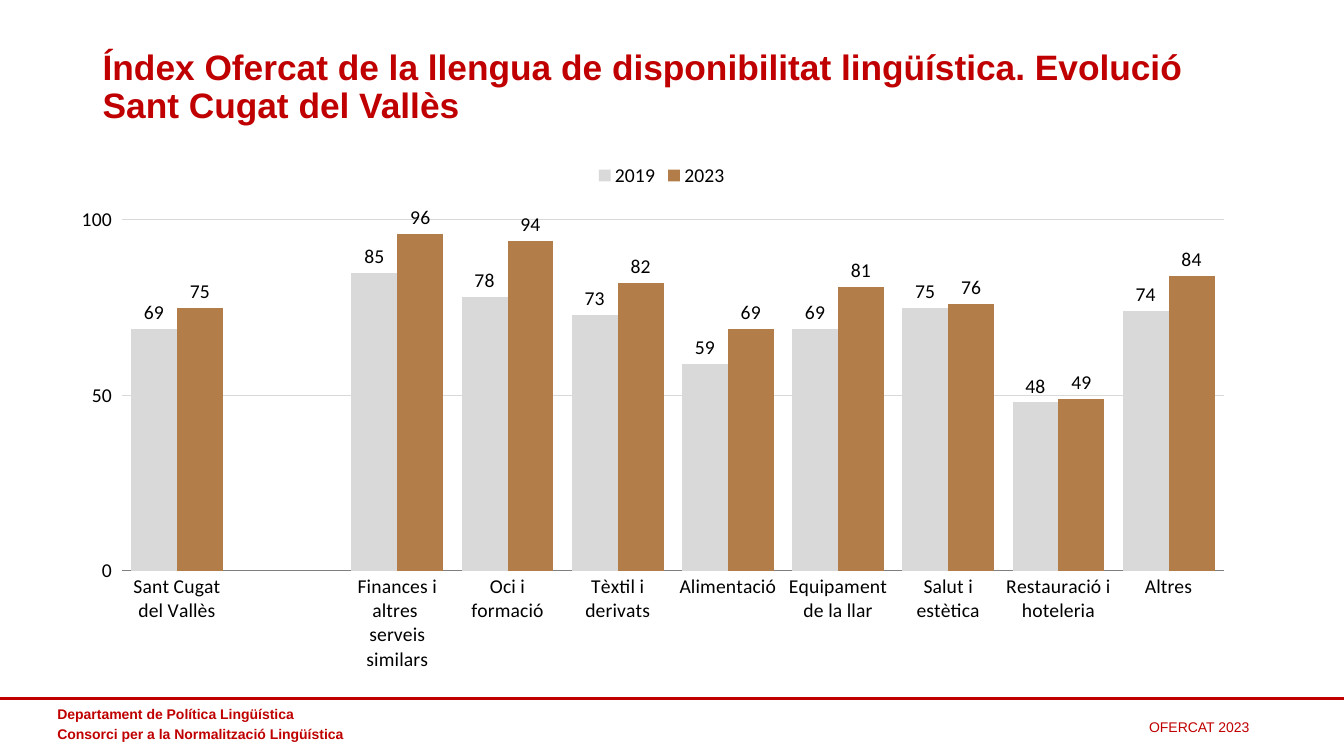
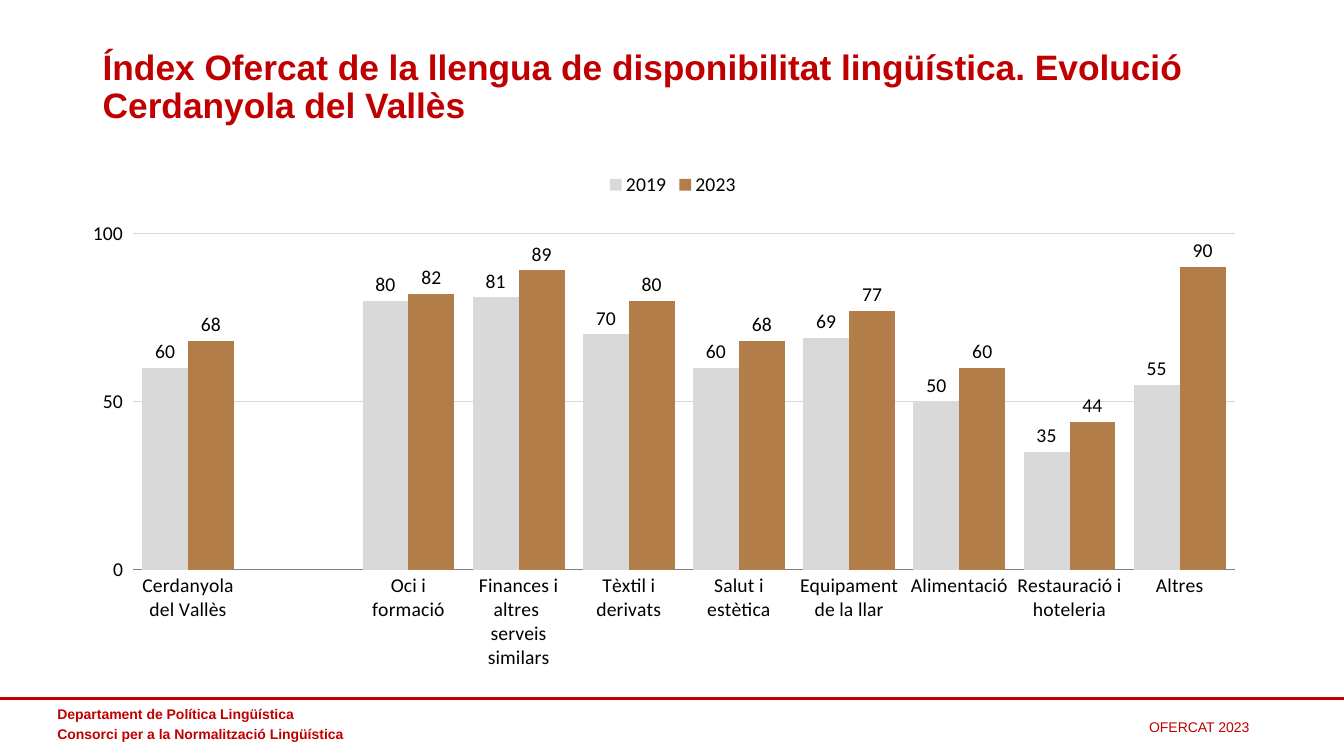
from lxml import etree
from pptx import Presentation
from pptx.chart.data import CategoryChartData
from pptx.dml.color import RGBColor
from pptx.enum.chart import (XL_CHART_TYPE, XL_LABEL_POSITION,
                             XL_LEGEND_POSITION, XL_TICK_MARK)
from pptx.enum.shapes import MSO_CONNECTOR
from pptx.enum.text import MSO_ANCHOR, PP_ALIGN
from pptx.oxml import parse_xml
from pptx.oxml.ns import nsdecls, qn
from pptx.util import Inches, Pt

RED = RGBColor(0xC0, 0x00, 0x00)
BLACK = RGBColor(0x00, 0x00, 0x00)
AXIS_GREY = RGBColor(0x80, 0x80, 0x80)
LIGHT_GREY = RGBColor(0xD9, 0xD9, 0xD9)
BROWN = RGBColor(0xB2, 0x7D, 0x49)

CLUSTERED = XL_CHART_TYPE.COLUMN_CLUSTERED
OUTSIDE_END = XL_LABEL_POSITION.OUTSIDE_END
LEGEND_TOP = XL_LEGEND_POSITION.TOP
TICK_NONE, TICK_OUTSIDE = XL_TICK_MARK.NONE, XL_TICK_MARK.OUTSIDE
STRAIGHT = MSO_CONNECTOR.STRAIGHT
TOP, MIDDLE = MSO_ANCHOR.TOP, MSO_ANCHOR.MIDDLE
LEFT, RIGHT = PP_ALIGN.LEFT, PP_ALIGN.RIGHT

SLIDE_WIDTH, SLIDE_HEIGHT = 13.33, 7.5
FOOTER_TOP = 6.93
TITLE = "Índex Ofercat de la llengua de disponibilitat lingüística. Evolució"
DEPARTMENT = ["Departament de Política Lingüística",
              "Consorci per a la Normalització Lingüística"]

FINANCE = "Finances i altres \nserveis similars"
LEISURE = "Oci i formació"
TEXTILE = "Tèxtil i derivats"
FOOD = "Alimentació"
HOME = "Equipament de la llar"
HEALTH = "Salut i estètica"
CATERING = "Restauració i hoteleria"
OTHER = "Altres"

# Each sector maps to its 2019 and 2023 index; the empty one separates the total.
TOWNS = [
    {"name": "Sant Cugat del Vallès",
     "box": (0.81, 1.51, 11.5, 5.65),
     "plot": (0.034, 0.119, 0.951, 0.616),
     "index": {"Sant Cugat del Vallès": (69, 75), "": (None, None),
               FINANCE: (85, 96), LEISURE: (78, 94), TEXTILE: (73, 82),
               FOOD: (59, 69), HOME: (69, 81), HEALTH: (75, 76),
               CATERING: (48, 49), OTHER: (74, 84)}},
    {"name": "Cerdanyola del Vallès",
     "box": (0.92, 1.6, 11.5, 5.52),
     "plot": (0.034, 0.13, 0.951, 0.604),
     "index": {"Cerdanyola del Vallès": (60, 68), "": (None, None),
               LEISURE: (80, 82), FINANCE: (81, 89), TEXTILE: (70, 80),
               HEALTH: (60, 68), HOME: (69, 77), FOOD: (50, 60),
               CATERING: (35, 44), OTHER: (55, 90)}},
]


class Deck:
    """Holds the presentation, its style and the current slide."""
    text_font = "Arial"
    chart_font = "Calibri"
    chart_size = Pt(14)
    series_colors = {"2019": LIGHT_GREY, "2023": BROWN}

    def __init__(self):
        self.presentation = Presentation()
        self.presentation.slide_width = Inches(SLIDE_WIDTH)
        self.presentation.slide_height = Inches(SLIDE_HEIGHT)
        self.slide = None

    def add_slide(self, town_name):
        blank = self.presentation.slide_layouts[6]
        self.slide = self.presentation.slides.add_slide(blank)
        self.add_footer()
        self.add_text((0.92, 0.4, 11.5, 0.95), [f"{TITLE}\n{town_name}"], 25.2,
                      bold=True, spacing=0.9, anchor=MIDDLE)

    def add_footer(self):
        self.add_rule(FOOTER_TOP)
        self.add_text((5.82, 7.06, 6.67, 0.28), ["OFERCAT 2023"], 10, align=RIGHT)
        self.add_text((0.47, FOOTER_TOP, 3.29, 0.48), DEPARTMENT, 10, bold=True)

    def add_rule(self, top):
        """Draw a line across the whole slide."""
        rule = self.slide.shapes.add_connector(
            STRAIGHT, Inches(0), Inches(top), Inches(SLIDE_WIDTH), Inches(top))
        rule.line.color.rgb = RED
        rule.line.width = Pt(1.5)
        etree.SubElement(rule.element.spPr, qn("a:effectLst"))

    def add_text(self, box, lines, size, bold=False, spacing=1.14,
                 align=LEFT, anchor=TOP):
        """Write one paragraph per item; a newline inside one is a line break."""
        shape = self.slide.shapes.add_textbox(*map(Inches, box))
        frame = shape.text_frame
        frame.word_wrap = True
        frame.vertical_anchor = anchor
        for number, line in enumerate(lines):
            paragraph = frame.add_paragraph() if number else frame.paragraphs[0]
            paragraph.alignment = align
            paragraph.line_spacing = spacing
            for part_number, part in enumerate(line.split("\n")):
                if part_number:
                    paragraph.add_line_break()
                run = paragraph.add_run()
                run.text = part
                self.style_font(run.font, self.text_font, Pt(size), RED)
                run.font.bold = bold

    def style_font(self, font, name, size, color):
        font.name = name
        font.size = size
        font.color.rgb = color

    def style_chart_font(self, font):
        self.style_font(font, self.chart_font, self.chart_size, BLACK)

    def add_column_chart(self, box, plot_box, index):
        data = CategoryChartData(number_format="General")
        data.categories = list(index)
        for name, values in zip(self.series_colors, zip(*index.values())):
            data.add_series(name, values)
        frame = self.slide.shapes.add_chart(CLUSTERED, *map(Inches, box), data)
        chart = frame.chart
        chart.has_title = False
        self.style_chart_font(chart.font)
        chart.has_legend = True
        chart.legend.position = LEGEND_TOP
        chart.legend.include_in_layout = False
        self.style_chart_font(chart.legend.font)
        self.style_axes(chart)
        self.style_columns(chart.plots[0])
        self.place_plot(chart, plot_box)

    def style_axes(self, chart):
        category_axis, value_axis = chart.category_axis, chart.value_axis
        for axis in (category_axis, value_axis):
            axis.minor_tick_mark = TICK_NONE
            self.style_chart_font(axis.tick_labels.font)
        category_axis.major_tick_mark = TICK_NONE
        category_axis.format.line.color.rgb = AXIS_GREY
        category_axis.format.line.width = Pt(0.75)
        value_axis.major_tick_mark = TICK_OUTSIDE
        value_axis.format.line.fill.background()
        value_axis.minimum_scale = 0
        value_axis.maximum_scale = 100
        value_axis.major_unit = 50
        value_axis.has_major_gridlines = True
        grid_line = value_axis.major_gridlines.format.line
        grid_line.color.rgb = LIGHT_GREY
        grid_line.width = Pt(0.75)

    def style_columns(self, plot):
        plot.gap_width = 40
        plot.overlap = 0
        plot.vary_by_categories = False
        for series in plot.series:
            series.format.fill.solid()
            series.format.fill.fore_color.rgb = self.series_colors[series.name]
            labels = series.data_labels
            labels.show_value = True
            labels.position = OUTSIDE_END
            labels.number_format = "#,##0"
            labels.number_format_is_linked = False
            self.style_chart_font(labels.font)

    def place_plot(self, chart, plot_box):
        """Fix the inner plot area, given as fractions of the chart."""
        plot_area = chart.element.chart.plotArea
        for layout in plot_area.findall(qn("c:layout")):
            plot_area.remove(layout)
        sides = "".join(f'<c:{side} val="{value}"/>'
                        for side, value in zip("xywh", plot_box))
        plot_area.insert(0, parse_xml(
            f'<c:layout {nsdecls("c")}><c:manualLayout>'
            '<c:layoutTarget val="inner"/>'
            '<c:xMode val="edge"/><c:yMode val="edge"/>'
            f'{sides}</c:manualLayout></c:layout>'))


def main():
    deck = Deck()
    for town in TOWNS:
        deck.add_slide(town["name"])
        deck.add_column_chart(town["box"], town["plot"], town["index"])
    deck.presentation.save("out.pptx")


if __name__ == "__main__":
    main()
